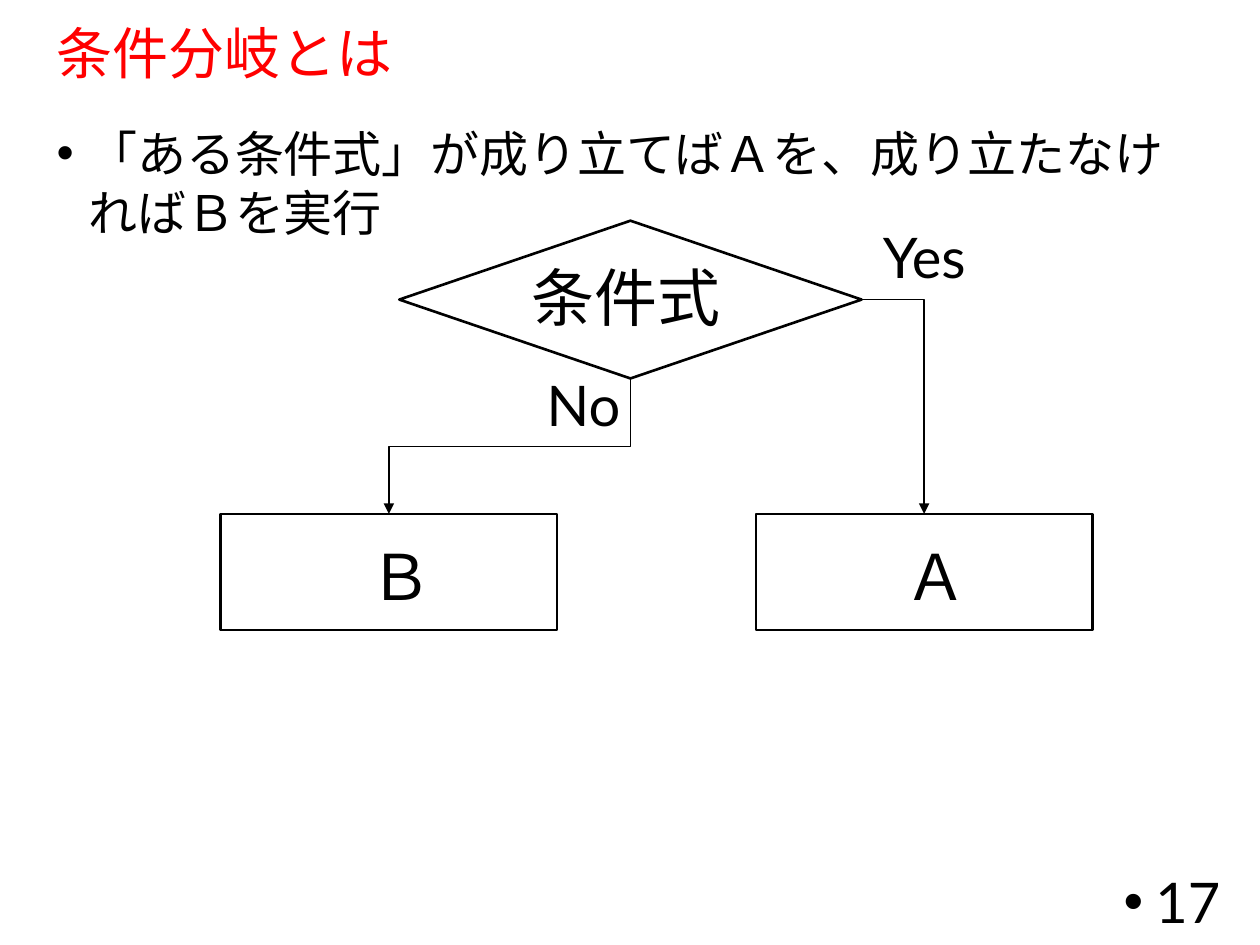
from dataclasses import dataclass, field
from typing import Any

from lxml.etree import SubElement
from pptx import Presentation
from pptx.dml.color import RGBColor
from pptx.enum.shapes import MSO_CONNECTOR, MSO_SHAPE
from pptx.enum.text import MSO_ANCHOR, MSO_AUTO_SIZE, PP_ALIGN
from pptx.oxml.ns import qn
from pptx.util import Cm, Pt


@dataclass(frozen=True)
class Theme:
    font: str = "Lato"
    ink: RGBColor = RGBColor(0, 0, 0)
    accent: RGBColor = RGBColor(255, 0, 0)
    body: Pt = Pt(28)
    label: Pt = Pt(32)
    node: Pt = Pt(36)
    outline: Pt = Pt(1.5)
    flow: Pt = Pt(0.75)
    hanging: Cm = Cm(0.64)


THEME = Theme()
MIDDLE = {"vertical_anchor": MSO_ANCHOR.MIDDLE}
UNWRAPPED = {"word_wrap": False, "auto_size": MSO_AUTO_SIZE.SHAPE_TO_FIT_TEXT}


@dataclass(frozen=True)
class Box:
    """Left, top, width and height in centimetres."""
    left: float
    top: float
    width: float
    height: float

    def lengths(self) -> tuple[Cm, ...]:
        return tuple(Cm(v) for v in (self.left, self.top, self.width, self.height))


@dataclass(frozen=True)
class Caption:
    text: str
    box: Box
    size: Pt = THEME.label
    color: RGBColor = THEME.ink
    bullet: bool = False
    frame: dict[str, Any] = field(default_factory=dict)
    paragraph: dict[str, Any] = field(default_factory=dict)


@dataclass(frozen=True)
class Step:
    kind: MSO_SHAPE
    box: Box


@dataclass(frozen=True)
class Branch:
    start: tuple[float, float]
    end: tuple[float, float]
    down_first: bool


def apply(target: Any, values: dict[str, Any]) -> None:
    for name, value in values.items():
        setattr(target, name, value)


def draw_caption(slide: Any, caption: Caption) -> None:
    frame = slide.shapes.add_textbox(*caption.box.lengths()).text_frame
    apply(frame, {"word_wrap": True, **caption.frame})
    paragraph = frame.paragraphs[0]
    apply(paragraph, caption.paragraph)
    if caption.bullet:
        properties = paragraph._p.get_or_add_pPr()
        properties.set("marL", str(THEME.hanging))
        properties.set("indent", str(-THEME.hanging))
        SubElement(properties, qn("a:buFont"), typeface="Arial")
        SubElement(properties, qn("a:buChar"), char="•")
    run = paragraph.add_run()
    run.text = caption.text
    apply(run.font, {"name": THEME.font, "size": caption.size})
    run.font.color.rgb = caption.color


def draw_step(slide: Any, step: Step) -> None:
    shape = slide.shapes.add_shape(step.kind, *step.box.lengths())
    shape.shadow.inherit = False
    shape.fill.background()
    shape.line.width = THEME.outline
    shape.line.color.rgb = THEME.ink


def draw_branch(slide: Any, branch: Branch) -> None:
    (x1, y1), (x2, y2) = branch.start, branch.end
    if branch.down_first:
        # A quarter turn about the centre swaps the width and height
        cx, cy = (x1 + x2) / 2, (y1 + y2) / 2
        half_w, half_h = abs(y2 - y1) / 2, abs(x2 - x1) / 2
        x1, y1, x2, y2 = cx - half_w, cy - half_h, cx + half_w, cy + half_h
    connector = slide.shapes.add_connector(
        MSO_CONNECTOR.ELBOW, Cm(x1), Cm(y1), Cm(x2), Cm(y2))
    connector.line.width = THEME.flow
    connector.line.color.rgb = THEME.ink
    properties = connector.element.spPr
    if branch.down_first:
        properties.find(qn("a:xfrm")).set("rot", str(90 * 60000))
    else:
        properties.find(qn("a:prstGeom")).set("prst", "bentConnector2")
    SubElement(properties.find(qn("a:ln")), qn("a:tailEnd"), type="triangle")
    SubElement(properties, qn("a:effectLst"))


# Flowchart geometry: both outcomes share a size and a row
DECISION = Box(8.05, 4.45, 9.32, 3.18)
OUTCOME_TOP, OUTCOME_W, OUTCOME_H = 10.36, 6.78, 2.34
OUTCOMES = {"Ｂ": 4.45, "Ａ": 15.24}
NO_X, YES_X = (left + OUTCOME_W / 2 for left in OUTCOMES.values())

STEPS = [Step(MSO_SHAPE.FLOWCHART_DECISION, DECISION)] + [
    Step(MSO_SHAPE.FLOWCHART_PROCESS, Box(left, OUTCOME_TOP, OUTCOME_W, OUTCOME_H))
    for left in OUTCOMES.values()]

BRANCHES = [
    Branch((DECISION.left + DECISION.width / 2, DECISION.top + DECISION.height),
           (NO_X, OUTCOME_TOP), down_first=True),
    Branch((DECISION.left + DECISION.width, DECISION.top + DECISION.height / 2),
           (YES_X, OUTCOME_TOP), down_first=False),
]

CAPTIONS = [
    # Title, statement and page number
    Caption("条件分岐とは", Box(0.89, 0.48, 23.5, 1.3), color=THEME.accent,
            frame=MIDDLE, paragraph={"line_spacing": 0.9}),
    Caption("「ある条件式」が成り立てばＡを、成り立たなければＢを実行",
            Box(0.89, 2.36, 23.5, 14.81), THEME.body, bullet=True),
    Caption("17", Box(19.13, 17.65, 5.72, 1.02), bullet=True,
            frame=MIDDLE, paragraph={"alignment": PP_ALIGN.RIGHT}),
    # Flowchart labels
    Caption("Yes", Box(17.55, 4.37, 2.4, 1.63), frame=UNWRAPPED),
    Caption("No", Box(10.77, 7.34, 2.2, 1.63), frame=UNWRAPPED),
    *(Caption(name, Box(left + 2.74, OUTCOME_TOP + 0.36, 1.8, 1.8), THEME.node,
              frame=UNWRAPPED) for name, left in OUTCOMES.items()),
    Caption("条件式", Box(10.41, 5.08, 4.42, 1.78), THEME.node,
            paragraph={"alignment": PP_ALIGN.CENTER}),
]


def main() -> None:
    deck = Presentation()
    apply(deck, {"slide_width": Cm(25.4), "slide_height": Cm(19.05)})
    slide = deck.slides.add_slide(deck.slide_layouts[6])
    for step in STEPS:
        draw_step(slide, step)
    for branch in BRANCHES:
        draw_branch(slide, branch)
    for caption in CAPTIONS:
        draw_caption(slide, caption)
    deck.save("out.pptx")


if __name__ == "__main__":
    main()
